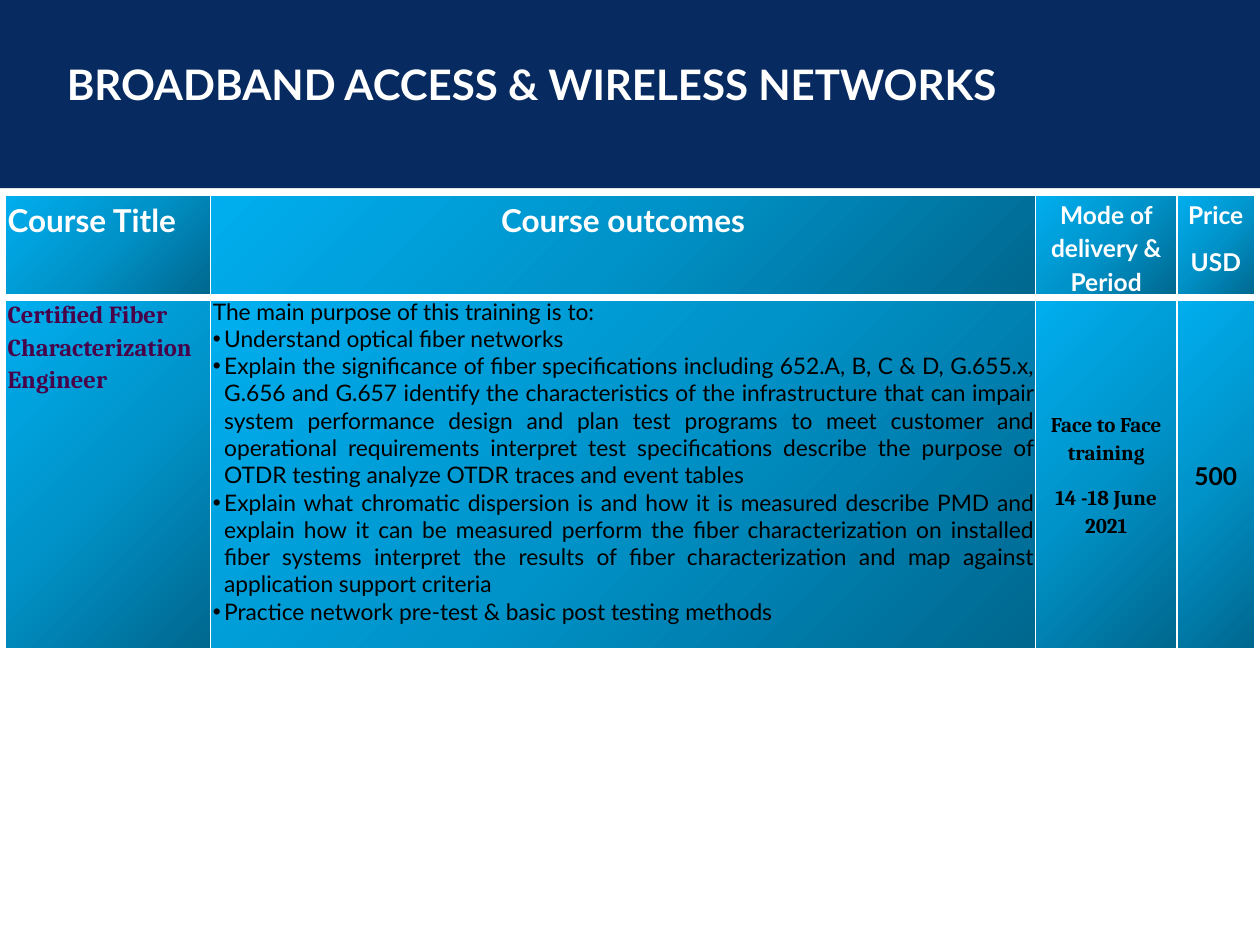
from lxml import etree
from pptx import Presentation, util as u
from pptx.dml.color import RGBColor
from pptx.enum import shapes, text
from pptx.oxml import ns

WHITE, BLACK, NAVY, PURPLE = "FFFFFF", "000000", "072B60", "480048"
GRADIENT = [(0, "00678E"), (50, "0093C9"), (100, "00AEEF")]
COLUMN_SHARES = [0.1643, 0.6603, 0.1129, 0.0625]
ROW_SHARES = [0.224, 0.776]
ALIGN = text.PP_ALIGN

HEADERS = [
    (["Course Title"], 18, ALIGN.LEFT),
    (["Course outcomes"], 18, ALIGN.CENTER),
    (["Mode of delivery & Period"], 14, ALIGN.CENTER),
    (["Price", "USD"], 14, ALIGN.CENTER),
]
PURPOSE = "The main purpose of this training is to:"
OUTCOMES = [
    "Understand optical fiber networks",
    "Explain the significance of fiber specifications including 652.A, B, C & D, "
    "G.655.x, G.656 and G.657 identify the characteristics of the infrastructure that "
    "can impair system performance design and plan test programs to meet customer and "
    "operational requirements interpret test specifications describe the purpose of "
    "OTDR testing analyze OTDR traces and event tables",
    "Explain what chromatic dispersion is and how it is measured describe PMD and "
    "explain how it can be measured perform the fiber characterization on installed "
    "fiber systems interpret the results of fiber characterization and map against "
    "application support criteria",
    "Practice network pre-test & basic post testing methods",
]


def color(value):
    return RGBColor.from_string(value)


def add_child(parent, tag, **attributes):
    return etree.SubElement(parent, ns.qn(tag), {k: str(v) for k, v in attributes.items()})


def write(frame, lines, size=14, font="Lato", fill=WHITE, bold=True, align=ALIGN.LEFT,
          spacing=None, before=0, after=0, bullet=None):
    """Append each line as a paragraph, reusing the frame's empty first one."""
    for line in lines:
        first = frame.paragraphs[0]
        paragraph = frame.add_paragraph() if first.runs else first
        paragraph.alignment = align
        paragraph.line_spacing = spacing
        paragraph.space_before, paragraph.space_after = u.Pt(before), u.Pt(after)
        run = paragraph.add_run()
        run.text = line
        run.font.size, run.font.name, run.font.bold = u.Pt(size), font, bold
        run.font.color.rgb = color(fill)
        if bullet:
            properties = paragraph._p.get_or_add_pPr()
            indent = u.Inches(0.09)
            properties.set("marL", str(indent))
            properties.set("indent", str(-indent))
            add_child(properties, "a:buFont", typeface="Arial")
            add_child(properties, "a:buChar", char=bullet)


def format_cell(cell, top_width, anchor):
    cell.margin_left = cell.margin_right = u.Inches(0.02)
    cell.margin_top = cell.margin_bottom = 0
    cell.vertical_anchor = anchor
    properties = cell._tc.get_or_add_tcPr()
    # White borders
    for side, width in (("L", 1), ("R", 1), ("T", top_width), ("B", 4.5)):
        line = add_child(properties, f"a:ln{side}", w=u.Pt(width))
        add_child(add_child(line, "a:solidFill"), "a:srgbClr", val=WHITE)
    # Gradient spreading from the bottom right corner
    gradient = add_child(properties, "a:gradFill", rotWithShape=1)
    stops = add_child(gradient, "a:gsLst")
    for position, value in GRADIENT:
        add_child(add_child(stops, "a:gs", pos=position * 1000), "a:srgbClr", val=value)
    shade = add_child(gradient, "a:path", path="circle")
    add_child(shade, "a:fillToRect", l=100000, t=100000)


def add_banner(slide, left, top, width, height):
    band = slide.shapes.add_shape(shapes.MSO_SHAPE.RECTANGLE, left, top, width, height)
    band.shadow.inherit = False
    band.fill.solid()
    band.fill.fore_color.rgb = color(NAVY)
    band.line.fill.background()
    slide.shapes._spTree.insert(2, band._element)  # behind the title

    title = slide.shapes.title
    title.left, title.top = left + int(width * 0.043), top + int(height * 0.275)
    title.width, title.height = int(width * 0.8), int(height * 0.34)
    title.text_frame.word_wrap = False
    title.text_frame.vertical_anchor = text.MSO_ANCHOR.MIDDLE
    write(title.text_frame, ["BROADBAND ACCESS & WIRELESS NETWORKS"], size=24)


def add_course_table(slide, left, top, width, height):
    table = slide.shapes.add_table(2, 4, left, top, width, height).table
    for column, share in zip(table.columns, COLUMN_SHARES):
        column.width = int(width * share)
    for row, share in zip(table.rows, ROW_SHARES):
        row.height = int(height * share)
    for row in range(2):
        for column in range(4):
            middle = row == 1 and column >= 2
            anchor = text.MSO_ANCHOR.MIDDLE if middle else text.MSO_ANCHOR.TOP
            format_cell(table.cell(row, column), 4.5 if row else 1, anchor)

    # Header row
    for column, (lines, size, align) in enumerate(HEADERS):
        write(table.cell(0, column).text_frame, lines, size=size, align=align,
              spacing=1.15, before=4, after=4)

    # Course row
    course, outcomes, delivery, price = [table.cell(1, c).text_frame for c in range(4)]
    loose = dict(spacing=1.15, after=10)
    plain = dict(size=13, fill=BLACK, bold=False, align=ALIGN.JUSTIFY)
    write(course, ["Certified Fiber Characterization Engineer"],
          font="Cambria", fill=PURPLE, **loose)
    write(outcomes, [PURPOSE], **plain)
    write(outcomes, OUTCOMES, bullet="•", **plain)
    write(delivery, ["Face to Face training", "14 -18 June 2021"], size=12,
          font="Cambria", fill=BLACK, align=ALIGN.CENTER, **loose)
    write(price, ["500"], fill=BLACK, align=ALIGN.CENTER, **loose)


def main():
    presentation = Presentation()
    presentation.slide_width, presentation.slide_height = u.Inches(10), u.Inches(7.5)
    width, height = presentation.slide_width, presentation.slide_height
    slide = presentation.slides.add_slide(presentation.slide_layouts[5])
    add_banner(slide, 0, 0, width, int(height * 0.199))
    add_course_table(slide, int(width * 0.004), int(height * 0.207),
                     int(width * 0.992), int(height * 0.482))
    presentation.save("out.pptx")


if __name__ == "__main__":
    main()
